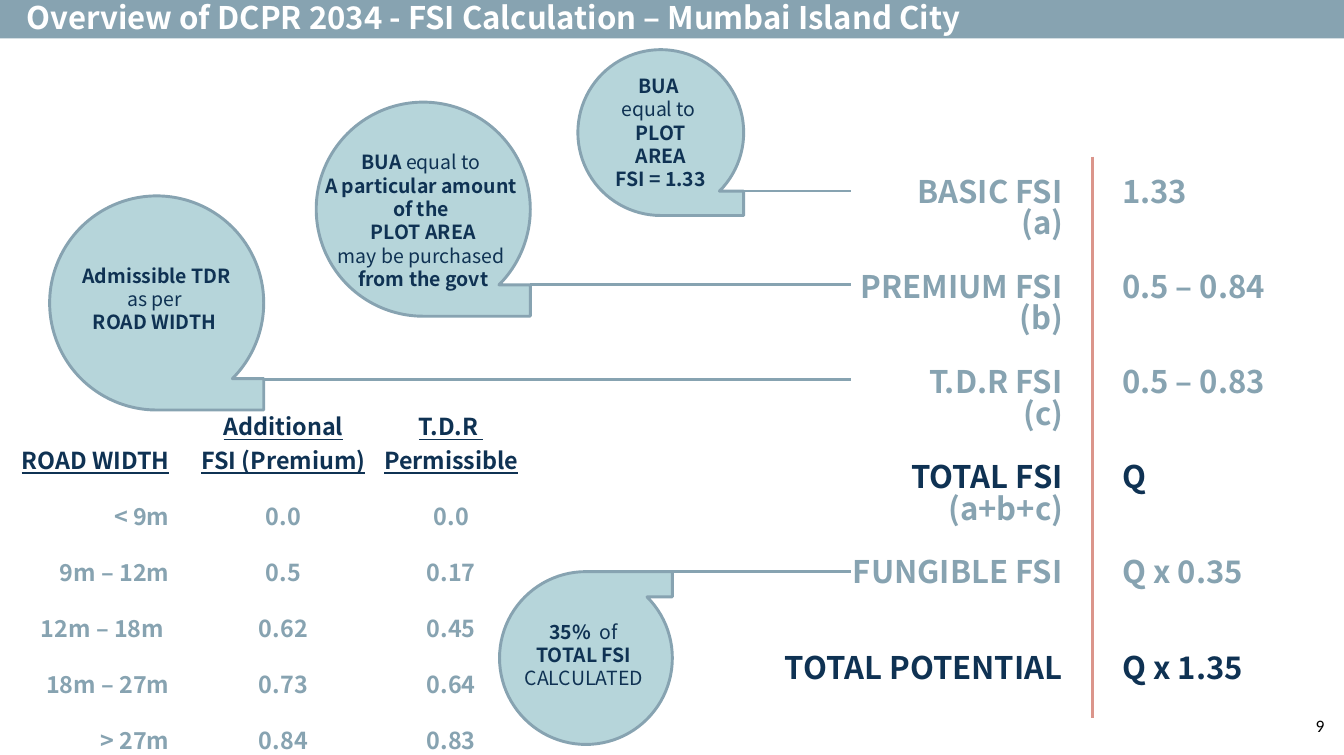
from pptx import Presentation
from pptx import util as u
from pptx.dml import color
from pptx.enum import shapes, text
from pptx.oxml import ns
from lxml import etree

NAVY = "0F3253"
SLATE = "87A3B1"
AQUA = "B6D5DA"
CORAL = "DB958B"
WHITE = "FFFFFF"
BLACK = "000000"
HEADING_FONT = "Noto Sans CJK KR"
LEFT, CENTER, RIGHT = text.PP_ALIGN.LEFT, text.PP_ALIGN.CENTER, text.PP_ALIGN.RIGHT
NO_GRID_STYLE = "{2D5ABB26-0587-4C30-8999-92F81FD0307C}"

LEADER_END = 12.17
LABEL_WIDTH = 4.28
FSI_LINE = {"line_spacing": 0.9, "space_before": u.Pt(63.36)}

FSI_ROWS = [
    ("BASIC FSI", "1.33", SLATE),
    ("PREMIUM FSI", "0.5 – 0.84", SLATE),
    ("T.D.R FSI", "0.5 – 0.83", SLATE),
    ("TOTAL FSI", "Q", NAVY),
    ("FUNGIBLE FSI", "Q x 0.35", SLATE),
    ("TOTAL POTENTIAL", "Q x 1.35", NAVY),
]
FSI_KEYS = ["(a)", "(b)", "(c)", "(a+b+c)"]

ROAD_ROWS = [
    ("ROAD WIDTH", "Additional\nFSI (Premium)", "T.D.R \nPermissible"),
    ("< 9m", "0.0", "0.0"),
    ("9m – 12m", "0.5", "0.17"),
    ("12m – 18m ", "0.62", "0.45"),
    ("18m – 27m", "0.73", "0.64"),
    ("> 27m", "0.84", "0.83"),
]
ROAD_COLUMNS = [(2.6, RIGHT, 0.28), (2.7, CENTER, 0.05), (2.1, CENTER, 0.05)]

BASIC_LABEL = [
    [("BUA ", True)],
    [("equal to ", False)],
    [("PLOT AREA", True)],
    [("FSI = 1.33", True)],
]
PREMIUM_LABEL = [
    [("BUA ", True), ("equal to ", False)],
    [("A particular amount ", True)],
    [("of the ", True)],
    [(" PLOT AREA ", True)],
    [("may be purchased ", False)],
    [("from the govt", True)],
]
TDR_LABEL = [
    [("Admissible TDR", True)],
    [("as per ", False)],
    [("ROAD WIDTH ", True)],
]
FUNGIBLE_LABEL = [
    [("35%  ", True), ("of ", False)],
    [("TOTAL FSI ", True)],
    [("CALCULATED ", False)],
]


def apply_format(target, values):
    for name, value in values.items():
        setattr(target, name, value)


def paint(color_format, hex_color):
    color_format.rgb = color.RGBColor.from_string(hex_color)


def fill_solid(shape, hex_color):
    shape.fill.solid()
    paint(shape.fill.fore_color, hex_color)


def place(shape, left, top, width, height):
    apply_format(shape, {"left": u.Inches(left), "top": u.Inches(top),
                         "width": u.Inches(width), "height": u.Inches(height)})


def set_frame(frame, **values):
    apply_format(frame, {"word_wrap": True, "auto_size": text.MSO_AUTO_SIZE.NONE,
                         "vertical_anchor": text.MSO_ANCHOR.TOP, **values})


def add_run(paragraph, words, hex_color, size, **values):
    run = paragraph.add_run()
    run.text = words
    apply_format(run.font, {"name": HEADING_FONT, "size": u.Pt(size), "bold": True, **values})
    paint(run.font.color, hex_color)


def paragraphs_for(frame, count):
    for _ in range(count - 1):
        frame.add_paragraph()
    return frame.paragraphs


def add_text_box(slide, left, top, width, height):
    box = slide.shapes.add_textbox(*map(u.Inches, (left, top, width, height)))
    set_frame(box.text_frame)
    return box.text_frame


def write_fsi_column(frame, entries, alignment):
    for index, (paragraph, entry) in enumerate(zip(paragraphs_for(frame, len(entries)), entries)):
        apply_format(paragraph, {**FSI_LINE, "alignment": alignment})
        if index == 0:
            paragraph.space_before = u.Pt(0)
        add_run(paragraph, *entry, 32)


def write_label(frame, lines):
    for paragraph, line in zip(paragraphs_for(frame, len(lines)), lines):
        paragraph.alignment = CENTER
        for words, bold in line:
            add_run(paragraph, words, NAVY, 20, bold=bold)


def add_line(slide, start, end, hex_color):
    line = slide.shapes.add_connector(shapes.MSO_CONNECTOR.STRAIGHT, *map(u.Inches, start + end))
    line.line.width = u.Pt(3)
    paint(line.line.color, hex_color)
    etree.SubElement(line._element.spPr, ns.qn("a:effectLst"))


def add_callout(slide, left, top, size, leader_y, lines, label_top=None, flipped=False):
    bubble = slide.shapes.add_shape(shapes.MSO_SHAPE.FLOWCHART_SEQUENTIAL_ACCESS_STORAGE,
                                    *map(u.Inches, (left, top, size, size)))
    bubble.shadow.inherit = False
    fill_solid(bubble, AQUA)
    bubble.line.width = u.Pt(3)
    paint(bubble.line.color, SLATE)
    if flipped:
        bubble._element.spPr.find(ns.qn("a:xfrm")).set("flipV", "1")
    add_line(slide, (left + size, leader_y), (LEADER_END, leader_y), SLATE)
    if label_top is None:
        frame = bubble.text_frame
        set_frame(frame, vertical_anchor=text.MSO_ANCHOR.MIDDLE)
    else:
        label_left = left + (size - LABEL_WIDTH) / 2
        frame = add_text_box(slide, label_left, label_top, LABEL_WIDTH, 0.1 + len(lines) / 3)
    write_label(frame, lines)


def add_title(slide, words):
    title = slide.shapes.title
    place(title, 0, 0, 19.21, 0.55)
    fill_solid(title, SLATE)
    set_frame(title.text_frame, margin_left=u.Inches(0.38), margin_top=u.Inches(0.04),
              margin_bottom=u.Inches(0))
    paragraph = title.text_frame.paragraphs[0]
    apply_format(paragraph, {"alignment": LEFT, "line_spacing": 0.9})
    add_run(paragraph, words, WHITE, 32)


def add_fsi_summary(slide):
    body = slide.placeholders[1]
    place(body, 9.61, 2.47, 5.68, 7.51)
    set_frame(body.text_frame)
    write_fsi_column(body.text_frame, [(name, shade) for name, _, shade in FSI_ROWS], RIGHT)
    for paragraph in body.text_frame.paragraphs:
        properties = paragraph._p.get_or_add_pPr()
        properties.set("marL", "0")
        properties.set("indent", "0")
        etree.SubElement(properties, ns.qn("a:buNone"))
    add_line(slide, (15.61, 2.24), (15.61, 10.26), CORAL)
    write_fsi_column(add_text_box(slide, 15.94, 2.47, 2.99, 7.51),
                     [(value, shade) for _, value, shade in FSI_ROWS], LEFT)
    write_fsi_column(add_text_box(slide, 13.28, 2.92, 2.02, 7.05),
                     [(key, SLATE) for key in FSI_KEYS], RIGHT)


def add_road_table(slide):
    frame = slide.shapes.add_table(len(ROAD_ROWS), len(ROAD_COLUMNS),
                                   *map(u.Inches, (0.1, 5.84, 7.4, 4.9)))
    table = frame.table
    apply_format(table, {"first_row": False, "horz_banding": False})
    table._tbl.tblPr.find(ns.qn("a:tableStyleId")).text = NO_GRID_STYLE
    for column, (width, _, _) in zip(table.columns, ROAD_COLUMNS):
        column.width = u.Inches(width)
    for index, (row, entries) in enumerate(zip(table.rows, ROAD_ROWS)):
        header = index == 0
        row.height = u.Inches(0.9 if header else 0.8)
        for cell, words, (_, alignment, margin) in zip(row.cells, entries, ROAD_COLUMNS):
            cell.fill.background()
            apply_format(cell, {"vertical_anchor": text.MSO_ANCHOR.BOTTOM,
                                "margin_left": u.Inches(0.05), "margin_right": u.Inches(margin),
                                "margin_top": u.Inches(0), "margin_bottom": u.Inches(0.05)})
            lines = words.split("\n")
            for paragraph, line in zip(paragraphs_for(cell.text_frame, len(lines)), lines):
                paragraph.alignment = alignment
                add_run(paragraph, line, NAVY if header else SLATE, 24, underline=header)


def add_page_number(slide, number):
    paragraph = add_text_box(slide, 17.05, 10.17, 1.98, 0.61).paragraphs[0]
    paragraph.alignment = RIGHT
    add_run(paragraph, number, BLACK, 18, name="Calibri", bold=False)


def main():
    presentation = Presentation()
    apply_format(presentation, {"slide_width": u.Inches(19.21), "slide_height": u.Inches(10.79)})
    slide = presentation.slides.add_slide(presentation.slide_layouts[1])
    add_title(slide, "Overview of DCPR 2034 - FSI Calculation – Mumbai Island City")
    add_fsi_summary(slide)
    add_road_table(slide)
    add_callout(slide, 8.26, 0.71, 2.37, 2.73, BASIC_LABEL)
    add_callout(slide, 4.52, 1.46, 3.06, 4.06, PREMIUM_LABEL, label_top=2.1)
    add_callout(slide, 0.71, 2.8, 3.06, 5.42, TDR_LABEL, label_top=3.72)
    add_callout(slide, 7.14, 8.17, 2.47, 8.17, FUNGIBLE_LABEL, label_top=8.81, flipped=True)
    add_page_number(slide, "9")
    presentation.save("out.pptx")


if __name__ == "__main__":
    main()
